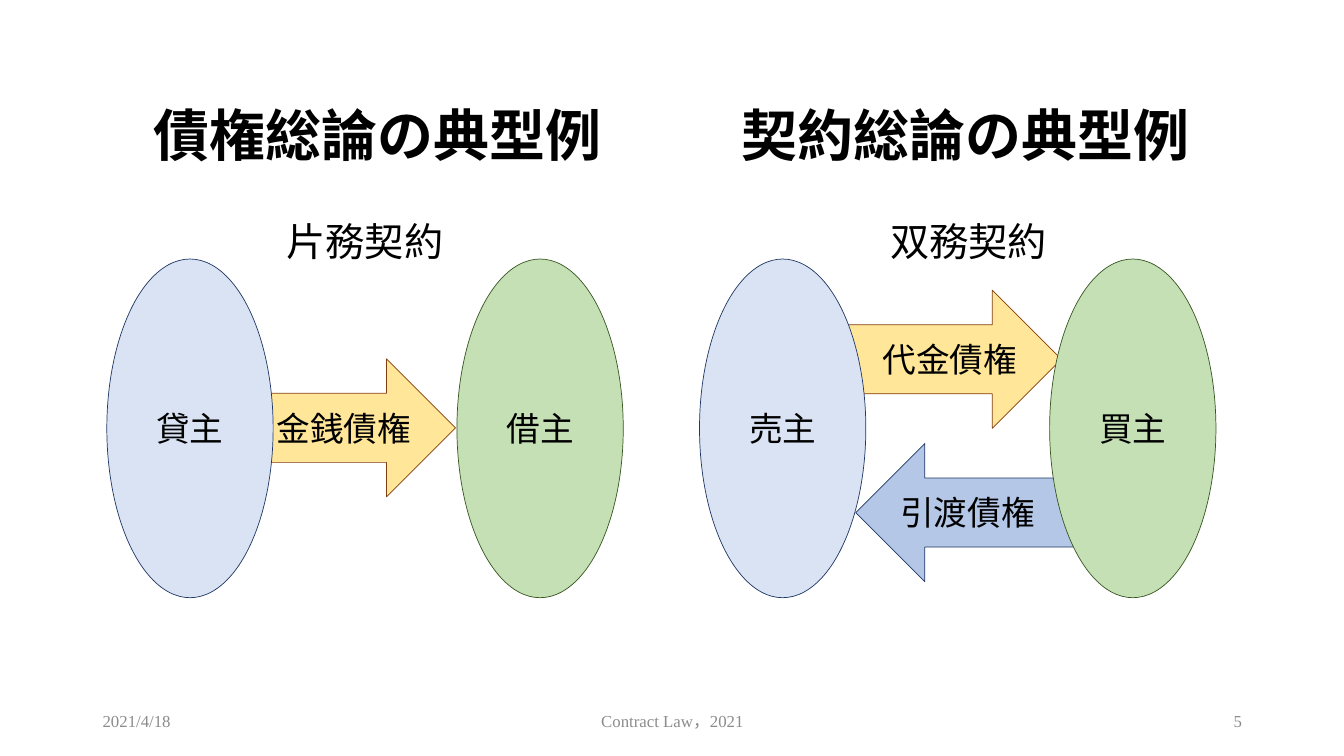
from dataclasses import dataclass

from pptx import Presentation
from pptx.dml.color import RGBColor
from pptx.enum.shapes import MSO_SHAPE
from pptx.enum.text import MSO_ANCHOR, PP_ALIGN
from pptx.util import Inches, Pt

ELLIPSE = MSO_SHAPE.OVAL
RIGHT_ARROW = MSO_SHAPE.RIGHT_ARROW
LEFT_ARROW = MSO_SHAPE.LEFT_ARROW
LEFT, CENTER, RIGHT = PP_ALIGN.LEFT, PP_ALIGN.CENTER, PP_ALIGN.RIGHT
TOP, MIDDLE = MSO_ANCHOR.TOP, MSO_ANCHOR.MIDDLE

SLIDE_W, SLIDE_H = Inches(13.33), Inches(7.5)
COLS, ROWS = 40, 22.5


@dataclass(frozen=True)
class Paint:
    fill: str
    line: str


@dataclass(frozen=True)
class Theme:
    font: str = "Times New Roman"
    ink: str = "000000"
    muted: str = "8C8C8C"
    title: int = 40
    caption: int = 28
    label: int = 24
    footer: int = 12
    line_width: float = 0.5
    creditor: Paint = Paint("DAE3F3", "203864")
    debtor: Paint = Paint("C5E0B4", "385723")
    money: Paint = Paint("FFE699", "843C0B")
    delivery: Paint = Paint("B4C7E7", "203864")


THEME = Theme()


@dataclass(frozen=True)
class Box:
    col: float
    row: float
    cols: float
    rows: float

    def emu(self) -> tuple[int, int, int, int]:
        w, h = SLIDE_W / COLS, SLIDE_H / ROWS
        return (round(self.col * w), round(self.row * h),
                round(self.cols * w), round(self.rows * h))


@dataclass(frozen=True)
class Label:
    text: str
    box: Box
    size: int
    align: PP_ALIGN = CENTER
    anchor: MSO_ANCHOR = MIDDLE
    color: str = THEME.ink
    bold: bool = False
    spacing: float = 1.0


@dataclass(frozen=True)
class Figure:
    kind: MSO_SHAPE
    paint: Paint
    label: Label


@dataclass(frozen=True)
class Panel:
    title: str
    title_col: float
    caption: str
    caption_col: float
    creditor: str
    debtor: str
    party_col: float


PARTY_STEP = 10.42
ARROW_ROWS = 4.11

ARROWS = [
    Figure(kind, paint, Label(text, Box(col, row, cols, ARROW_ROWS), THEME.label, align))
    for kind, paint, text, col, row, cols, align in (
        (LEFT_ARROW, THEME.delivery, "引渡債権", 25.47, 13.2, 6.75, LEFT),
        (RIGHT_ARROW, THEME.money, "金銭債権", 7.74, 10.68, 5.82, RIGHT),
        (RIGHT_ARROW, THEME.money, "代金債権", 25.17, 8.64, 6.42, RIGHT),
    )
]

PANELS = [
    Panel("債権総論の典型例", 2.76, "片務契約", 7.95, "貸主", "借主", 3.18),
    Panel("契約総論の典型例", 20.25, "双務契約", 25.92, "売主", "買主", 20.82),
]

FOOTERS = [
    Label(text, Box(col, 20.85, cols, 1.2), THEME.footer, align, color=THEME.muted)
    for text, col, cols, align in (
        ("2021/4/18", 2.76, 9, LEFT),
        ("Contract Law，2021", 13.26, 13.5, CENTER),
        ("5", 28.26, 9, RIGHT),
    )
]


def assign(target: object, values: dict[str, object]) -> None:
    for name, value in values.items():
        setattr(target, name, value)


def write(sp, label: Label) -> None:
    tf = sp.text_frame
    p = tf.paragraphs[0]
    r = p.add_run()
    assign(tf, {"word_wrap": True, "vertical_anchor": label.anchor})
    assign(p, {"alignment": label.align, "line_spacing": label.spacing})
    assign(r, {"text": label.text})
    assign(r.font, {"name": THEME.font, "size": Pt(label.size), "bold": label.bold})
    r.font.color.rgb = RGBColor.from_string(label.color)


def draw_label(s, label: Label) -> None:
    write(s.shapes.add_textbox(*label.box.emu()), label)


def draw_figure(s, figure: Figure) -> None:
    sp = s.shapes.add_shape(figure.kind, *figure.label.box.emu())
    sp.shadow.inherit = False
    sp.fill.solid()
    sp.fill.fore_color.rgb = RGBColor.from_string(figure.paint.fill)
    sp.line.color.rgb = RGBColor.from_string(figure.paint.line)
    sp.line.width = Pt(THEME.line_width)
    write(sp, figure.label)


def draw_panel(s, panel: Panel) -> None:
    draw_label(s, Label(panel.title, Box(panel.title_col, 2.76, 16.95, 2.7),
                        THEME.title, bold=True, spacing=0.9))
    parties = ((panel.creditor, THEME.creditor), (panel.debtor, THEME.debtor))
    for i, (text, paint) in enumerate(parties):
        box = Box(panel.party_col + i * PARTY_STEP, 7.71, 4.95, 10.08)
        draw_figure(s, Figure(ELLIPSE, paint, Label(text, box, THEME.label)))
    draw_label(s, Label(panel.caption, Box(panel.caption_col, 6.33, 5.82, 1.71),
                        THEME.caption, anchor=TOP))


def main() -> None:
    prs = Presentation()
    assign(prs, {"slide_width": SLIDE_W, "slide_height": SLIDE_H})
    s = prs.slides.add_slide(prs.slide_layouts[6])
    for arrow in ARROWS:
        draw_figure(s, arrow)
    for panel in PANELS:
        draw_panel(s, panel)
    for footer in FOOTERS:
        draw_label(s, footer)
    prs.save("out.pptx")


if __name__ == "__main__":
    main()
